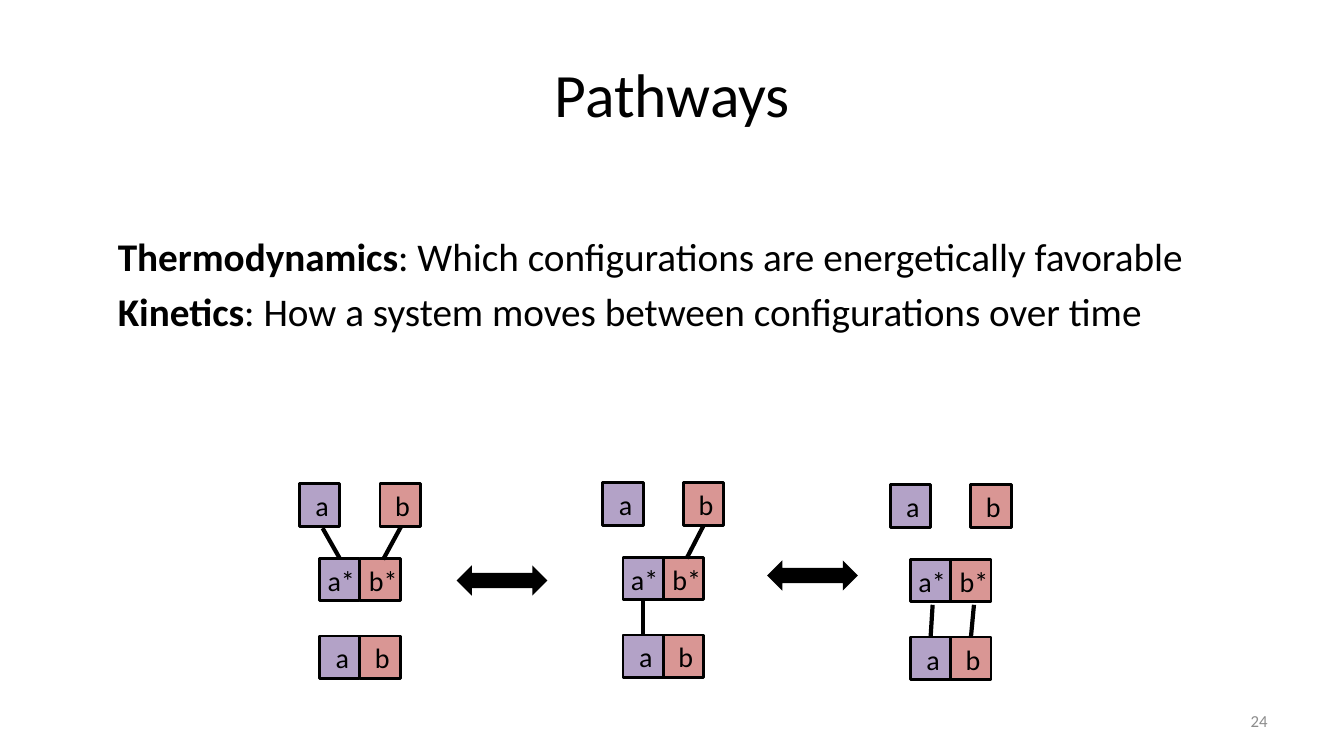
from pptx import Presentation
from pptx.dml.color import RGBColor
from pptx.enum.shapes import MSO_CONNECTOR, MSO_SHAPE
from pptx.enum.text import MSO_ANCHOR, PP_ALIGN
from pptx.oxml.ns import qn
from pptx.util import Inches, Pt
from lxml import etree

RECTANGLE = MSO_SHAPE.RECTANGLE
DOUBLE_ARROW = MSO_SHAPE.LEFT_RIGHT_ARROW
STRAIGHT = MSO_CONNECTOR.STRAIGHT
TOP, MIDDLE = MSO_ANCHOR.TOP, MSO_ANCHOR.MIDDLE
LEFT, CENTER, RIGHT = PP_ALIGN.LEFT, PP_ALIGN.CENTER, PP_ALIGN.RIGHT

BLACK, GREY, PURPLE, ROSE = "000000", "8C8C8C", "B3A2C7", "D99694"

deck = Presentation()
deck.slide_width, deck.slide_height = Inches(13.33), Inches(7.5)
page = deck.slides.add_slide(deck.slide_layouts[6])


def rgb(color):
    return RGBColor.from_string(color)


def add_text(area, paragraphs, size, color=BLACK, align=LEFT, anchor=TOP,
             wrap=True, space_before=0):
    """Add a text box; each paragraph is a list of (text, bold) runs."""
    box = page.shapes.add_textbox(*[Inches(value) for value in area])
    frame = box.text_frame
    frame.word_wrap = wrap
    frame.vertical_anchor = anchor
    for index, runs in enumerate(paragraphs):
        para = frame.paragraphs[0] if index == 0 else frame.add_paragraph()
        para.alignment = align
        para.space_before = Pt(space_before)
        for text, bold in runs:
            span = para.add_run()
            span.text = text
            span.font.name = "Calibri"
            span.font.size = Pt(size)
            span.font.bold = bold
            span.font.color.rgb = rgb(color)


add_text((0.67, 0.3, 12, 1.25), [[("Pathways", False)]], 44,
         align=CENTER, anchor=MIDDLE)
definitions = [
    [("Thermodynamics", True),
     (": Which configurations are energetically favorable", False)],
    [("Kinetics", True),
     (": How a system moves between configurations over time", False)],
]
add_text((1.07, 2.26, 11.71, 1.59), definitions, 28, space_before=5.6)

# Each domain: label, fill, offset from the strand's left and from the top row
CELL_WIDTH, CELL_HEIGHT = 0.4, 0.42
domains = [
    ("a", PURPLE, -0.2, 0), ("b", ROSE, 0.6, 0),
    ("a*", PURPLE, 0, 0.74), ("b*", ROSE, 0.4, 0.74),
    ("a", PURPLE, 0, 1.51), ("b", ROSE, 0.4, 1.51),
]
# Label offset in its cell and label width
label_fit = {"a": (0.06, 0.34), "b": (0.05, 0.35),
             "a*": (-0.02, 0.48), "b*": (-0.01, 0.49)}

# Each state: left, top, and the bonds as (x1, y1, x2, y2) from that corner
states = [
    (3.17, 4.8, [(0.81, 0.42, 0.63, 0.75), (0.03, 0.44, 0.2, 0.74)]),
    (6.18, 4.79, [(0.8, 0.42, 0.63, 0.75), (0.2, 1.51, 0.2, 1.16)]),
    (9.03, 4.81, [(0.6, 1.51, 0.63, 1.19), (0.2, 1.51, 0.22, 1.19)]),
]
for left, top, bonds in states:
    for label, fill, dx, dy in domains:
        x, y = left + dx, top + dy
        cell = page.shapes.add_shape(RECTANGLE, Inches(x), Inches(y),
                                     Inches(CELL_WIDTH), Inches(CELL_HEIGHT))
        cell.shadow.inherit = False
        cell.fill.solid()
        cell.fill.fore_color.rgb = rgb(fill)
        cell.line.color.rgb = rgb(BLACK)
        cell.line.width = Pt(2)
    for label, fill, dx, dy in domains:
        shift, width = label_fit[label]
        add_text((left + dx + shift, top + dy, width, 0.44),
                 [[(label, False)]], 20, wrap=False)
    for x1, y1, x2, y2 in bonds:
        bond = page.shapes.add_connector(
            STRAIGHT, Inches(left + x1), Inches(top + y1),
            Inches(left + x2), Inches(top + y2))
        bond.line.color.rgb = rgb(BLACK)
        bond.line.width = Pt(3)
        properties = bond._element.find(qn("p:spPr"))
        etree.SubElement(properties, qn("a:effectLst"))

for left, top in [(4.53, 5.61), (7.61, 5.56)]:
    arrow = page.shapes.add_shape(DOUBLE_ARROW, Inches(left), Inches(top),
                                  Inches(0.9), Inches(0.3))
    arrow.shadow.inherit = False
    arrow.fill.solid()
    arrow.fill.fore_color.rgb = rgb(BLACK)
    arrow.line.fill.background()

add_text((9.56, 6.95, 3.11, 0.4), [[("24", False)]], 12, GREY,
         align=RIGHT, anchor=MIDDLE)

deck.save("out.pptx")
